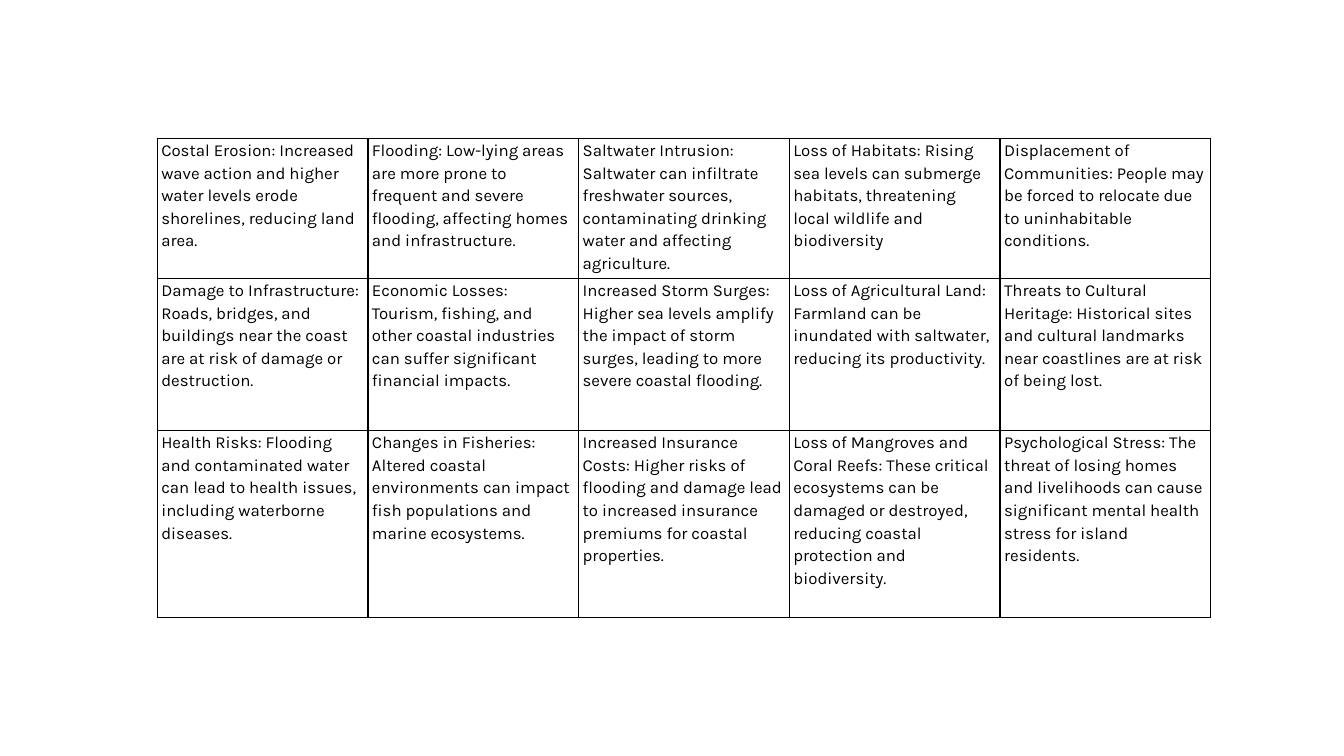
from dataclasses import dataclass

from lxml.etree import SubElement
from pptx import Presentation
from pptx.dml.color import RGBColor
from pptx.oxml.ns import qn
from pptx.slide import Slide
from pptx.table import Table, _Cell as Cell
from pptx.util import Inches, Pt

BLACK = RGBColor(0x00, 0x00, 0x00)

# Table geometry
TABLE_LEFT, TABLE_TOP = 1.56, 1.37
COLUMN_WIDTH = 2.09
ROW_HEIGHTS = (1.39, 1.51, 1.86)

# Format values
TABLE_FORMAT = {"first_row": False, "horz_banding": False}
CELL_FORMAT = {
    "margin_left": Inches(0.04),
    "margin_right": Inches(0.04),
    "margin_top": 0,
    "margin_bottom": 0,
}
FONT_FORMAT = {"name": "Karla", "size": Pt(12), "bold": False}
BORDER_WIDTH = Pt(1)
BORDER_SIDES = ("a:lnL", "a:lnR", "a:lnT", "a:lnB")


@dataclass(frozen=True)
class Impact:
    title: str
    detail: str


# Impacts of sea level rise, row by row
IMPACT_ROWS: list[list[Impact]] = [
    [
        Impact("Costal Erosion", "Increased wave action and higher water levels "
               "erode shorelines, reducing land area."),
        Impact("Flooding", "Low-lying areas are more prone to frequent and severe "
               "flooding, affecting homes and infrastructure."),
        Impact("Saltwater Intrusion", "Saltwater can infiltrate freshwater sources, "
               "contaminating drinking water and affecting agriculture."),
        Impact("Loss of Habitats", "Rising sea levels can submerge habitats, "
               "threatening local wildlife and biodiversity"),
        Impact("Displacement of Communities", "People may be forced to relocate "
               "due to uninhabitable conditions."),
    ],
    [
        Impact("Damage to Infrastructure", "Roads, bridges, and buildings near the "
               "coast are at risk of damage or destruction."),
        Impact("Economic Losses", "Tourism, fishing, and other coastal industries "
               "can suffer significant financial impacts."),
        Impact("Increased Storm Surges", "Higher sea levels amplify the impact of "
               "storm surges, leading to more severe coastal flooding."),
        Impact("Loss of Agricultural Land", "Farmland can be inundated with "
               "saltwater, reducing its productivity."),
        Impact("Threats to Cultural Heritage", "Historical sites and cultural "
               "landmarks near coastlines are at risk of being lost."),
    ],
    [
        Impact("Health Risks", "Flooding and contaminated water can lead to health "
               "issues, including waterborne diseases."),
        Impact("Changes in Fisheries", "Altered coastal environments can impact "
               "fish populations and marine ecosystems."),
        Impact("Increased Insurance Costs", "Higher risks of flooding and damage "
               "lead to increased insurance premiums for coastal properties."),
        Impact("Loss of Mangroves and Coral Reefs", "These critical ecosystems can "
               "be damaged or destroyed, reducing coastal protection and "
               "biodiversity."),
        Impact("Psychological Stress", "The threat of losing homes and livelihoods "
               "can cause significant mental health stress for island residents."),
    ],
]


def apply_format(target: object, values: dict[str, object]) -> None:
    for name, value in values.items():
        setattr(target, name, value)


def add_borders(cell: Cell) -> None:
    properties = cell._tc.get_or_add_tcPr()
    for side in BORDER_SIDES:
        line = SubElement(properties, qn(side), w=str(BORDER_WIDTH))
        fill = SubElement(line, qn("a:solidFill"))
        SubElement(fill, qn("a:srgbClr"), val=str(BLACK))


def fill_cell(cell: Cell, impact: Impact) -> None:
    apply_format(cell, CELL_FORMAT)
    add_borders(cell)
    cell.fill.background()
    paragraph = cell.text_frame.paragraphs[0]
    paragraph.line_spacing = 1.15
    run = paragraph.add_run()
    run.text = f"{impact.title}: {impact.detail}"
    apply_format(run.font, FONT_FORMAT)
    run.font.color.rgb = BLACK


def add_impact_table(slide: Slide, rows: list[list[Impact]]) -> Table:
    column_count = len(rows[0])
    table = slide.shapes.add_table(
        len(rows), column_count,
        Inches(TABLE_LEFT), Inches(TABLE_TOP),
        Inches(COLUMN_WIDTH * column_count), Inches(sum(ROW_HEIGHTS)),
    ).table
    apply_format(table, TABLE_FORMAT)
    for column in table.columns:
        column.width = Inches(COLUMN_WIDTH)
    for row, height, impacts in zip(table.rows, ROW_HEIGHTS, rows):
        row.height = Inches(height)
        for cell, impact in zip(row.cells, impacts):
            fill_cell(cell, impact)
    return table


def main() -> None:
    presentation = Presentation()
    presentation.slide_width = Inches(13.33)
    presentation.slide_height = Inches(7.5)
    slide = presentation.slides.add_slide(presentation.slide_layouts[6])
    add_impact_table(slide, IMPACT_ROWS)
    presentation.save("out.pptx")


if __name__ == "__main__":
    main()
